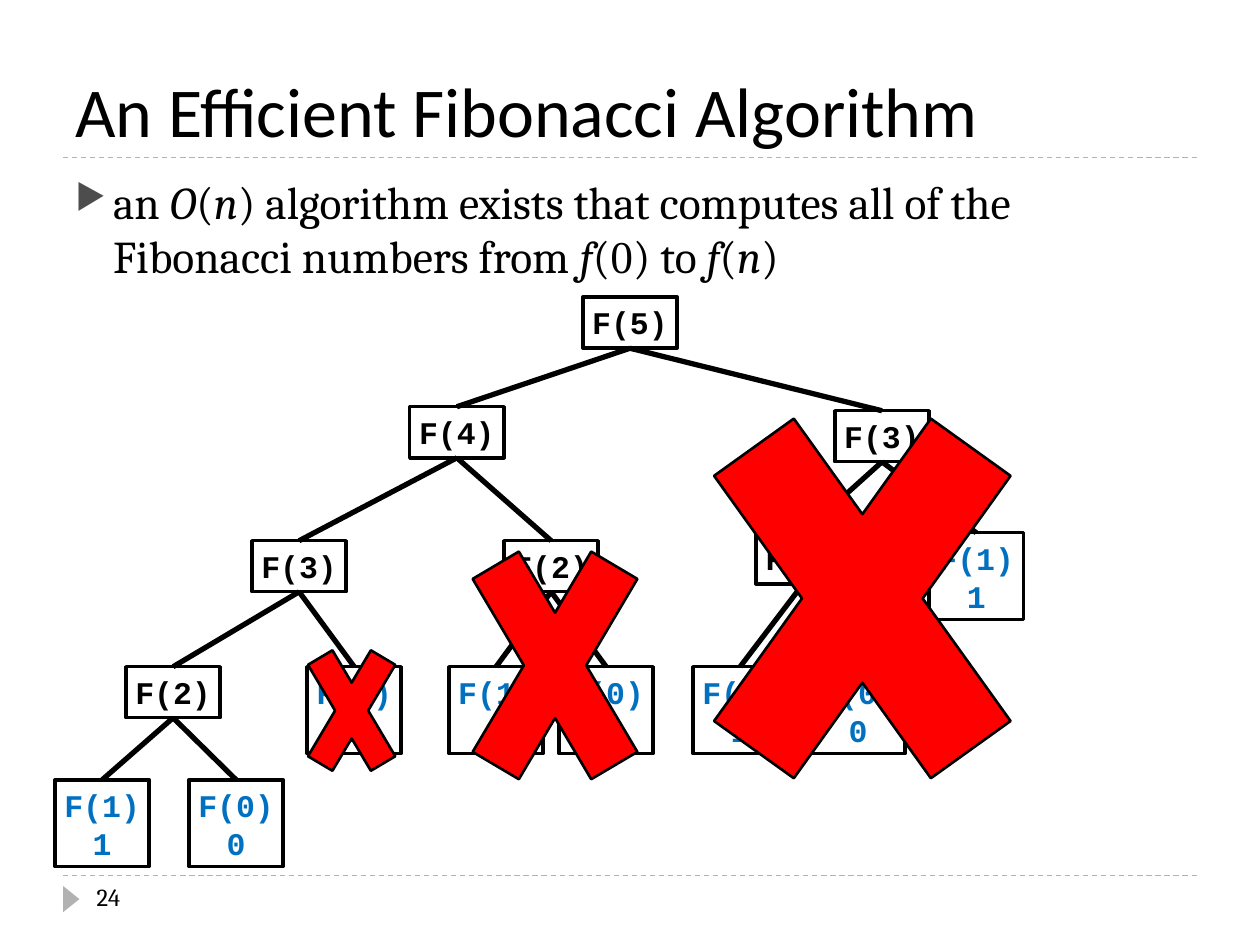
"""Build a slide showing the redundant calls in a recursive Fibonacci tree."""
from pptx import Presentation
from pptx.dml.color import RGBColor
from pptx.enum import dml, shapes, text
from pptx.oxml import parse_xml
from pptx.oxml.ns import nsdecls
from pptx.util import Cm, Pt

BLACK = RGBColor(0x00, 0x00, 0x00)
BLUE = RGBColor(0x00, 0x70, 0xC0)
RED = RGBColor(0xFF, 0x00, 0x00)
GRAY = RGBColor(0xB2, 0xB2, 0xB2)

NODE_WIDTH, CALL_HEIGHT, LEAF_HEIGHT = 1.9, 1.03, 1.75
BOTTOM, TOP = 2, 0

# Each node: argument, left, top, children
CALL_TREE = (5, 11.75, 5.99, [
    (4, 8.26, 8.2, [
        (3, 5.08, 10.9, [
            (2, 2.54, 13.44, [(1, 1.11, 15.72, []), (0, 3.81, 15.72, [])]),
            (1, 6.19, 13.44, []),
        ]),
        (2, 10.16, 10.9, [(1, 9.05, 13.44, []), (0, 11.27, 13.44, [])]),
    ]),
    (3, 16.83, 8.28, [
        (2, 15.24, 10.74, [(1, 13.97, 13.44, []), (0, 16.35, 13.44, [])]),
        (1, 18.73, 10.74, []),
    ]),
])

CROSSES = [(5.87, 12.27, 2.44, 4.11), (8.89, 9.53, 4.6, 7.77), (13.18, 6.2, 8.41, 11.73)]

STATEMENT = [
    ("an ", False), ("O", True), ("(", False), ("n", True),
    (") algorithm exists that computes all of the Fibonacci numbers from ", False),
    ("f", True), ("(", False), ("0", False), (") to ", False),
    ("f", True), ("(", False), ("n", True), (")", False),
]


def style(font, name, size, color=BLACK):
    font.name, font.size = name, Pt(size)
    font.color.rgb = color


def add_text(slide, left, top, width, height, anchor=text.MSO_ANCHOR.TOP):
    text_frame = slide.shapes.add_textbox(Cm(left), Cm(top), Cm(width), Cm(height)).text_frame
    text_frame.word_wrap = True
    text_frame.vertical_anchor = anchor
    return text_frame.paragraphs[0]


def add_label(slide, label, font_name, size, *box, **options):
    paragraph = add_text(slide, *box, **options)
    paragraph.text = label
    style(paragraph.runs[0].font, font_name, size)


def add_statement(slide):
    paragraph = add_text(slide, 1.27, 3.38, 22.86, 13.72)
    paragraph.space_before = Pt(6)
    for content, italic in STATEMENT:
        run = paragraph.add_run()
        run.text = content
        style(run.font, "Times New Roman" if content == "0" else "Cambria", 26)
        run.font.italic = italic
    properties = paragraph._p.get_or_add_pPr()
    properties.set("marL", str(Cm(0.76)))
    properties.set("indent", str(-Cm(0.76)))
    for bullet in (
        '<a:buClr {}><a:srgbClr val="4D4D4D"/></a:buClr>',
        '<a:buSzPct {} val="76000"/>',
        '<a:buChar {} char="▶"/>',
    ):
        properties.append(parse_xml(bullet.format(nsdecls("a"))))


def add_line(slide, start, end, color, width):
    line = slide.shapes.add_connector(
        shapes.MSO_CONNECTOR.STRAIGHT, *(Cm(value) for value in (*start, *end)))
    line.line.color.rgb = color
    line.line.width = Pt(width)
    line._element.spPr.append(parse_xml(f"<a:effectLst {nsdecls('a')}/>"))
    return line


def add_rule(slide, top):
    add_line(slide, (1.27, top), (24.13, top), GRAY, 0.75).line.dash_style = dml.MSO_LINE.DASH


def add_shape(slide, kind, left, top, width, height, fill=None, line_width=None):
    shape = slide.shapes.add_shape(kind, Cm(left), Cm(top), Cm(width), Cm(height))
    shape.shadow.inherit = False
    if fill is None:
        shape.fill.background()
    else:
        shape.fill.solid()
        shape.fill.fore_color.rgb = fill
    if line_width is None:
        shape.line.fill.background()
    else:
        shape.line.color.rgb = BLACK
        shape.line.width = Pt(line_width)
    return shape


def add_call(slide, argument, left, top, children):
    is_leaf = not children
    node = add_shape(slide, shapes.MSO_SHAPE.RECTANGLE, left, top, NODE_WIDTH,
                     LEAF_HEIGHT if is_leaf else CALL_HEIGHT, line_width=2)
    text_frame = node.text_frame
    text_frame.text = f"F({argument})\n{argument}" if is_leaf else f"F({argument})"
    text_frame.word_wrap = False
    text_frame.vertical_anchor = text.MSO_ANCHOR.TOP
    for paragraph in text_frame.paragraphs:
        paragraph.alignment = text.PP_ALIGN.CENTER
        font = paragraph.runs[0].font
        style(font, "Courier New", 18, BLUE if is_leaf else BLACK)
        font.bold = True
    for child in children:
        child_node = add_call(slide, *child)
        branch = add_line(slide, (0, 0), (1, 1), BLACK, 3)
        branch.begin_connect(node, BOTTOM)
        branch.end_connect(child_node, TOP)
    return node


def main():
    presentation = Presentation()
    presentation.slide_width, presentation.slide_height = Cm(25.4), Cm(19.05)
    slide = presentation.slides.add_slide(presentation.slide_layouts[6])
    for top in (17.65, 3.18):
        add_rule(slide, top)
    marker = add_shape(slide, shapes.MSO_SHAPE.ISOSCELES_TRIANGLE, 1.17, 17.96, 0.53, 0.33, GRAY)
    marker.rotation = 90
    add_label(slide, "An Efficient Fibonacci Algorithm", "Calibri", 40,
              1.27, 0.43, 22.86, 2.74, anchor=text.MSO_ANCHOR.BOTTOM)
    add_statement(slide)
    add_label(slide, "24", "Cambria", 14, 1.7, 17.65, 5.51, 1.02)
    add_call(slide, *CALL_TREE)
    for box in CROSSES:
        add_shape(slide, shapes.MSO_SHAPE.MATH_MULTIPLY, *box, fill=RED, line_width=1.5)
    presentation.save("out.pptx")


if __name__ == "__main__":
    main()
